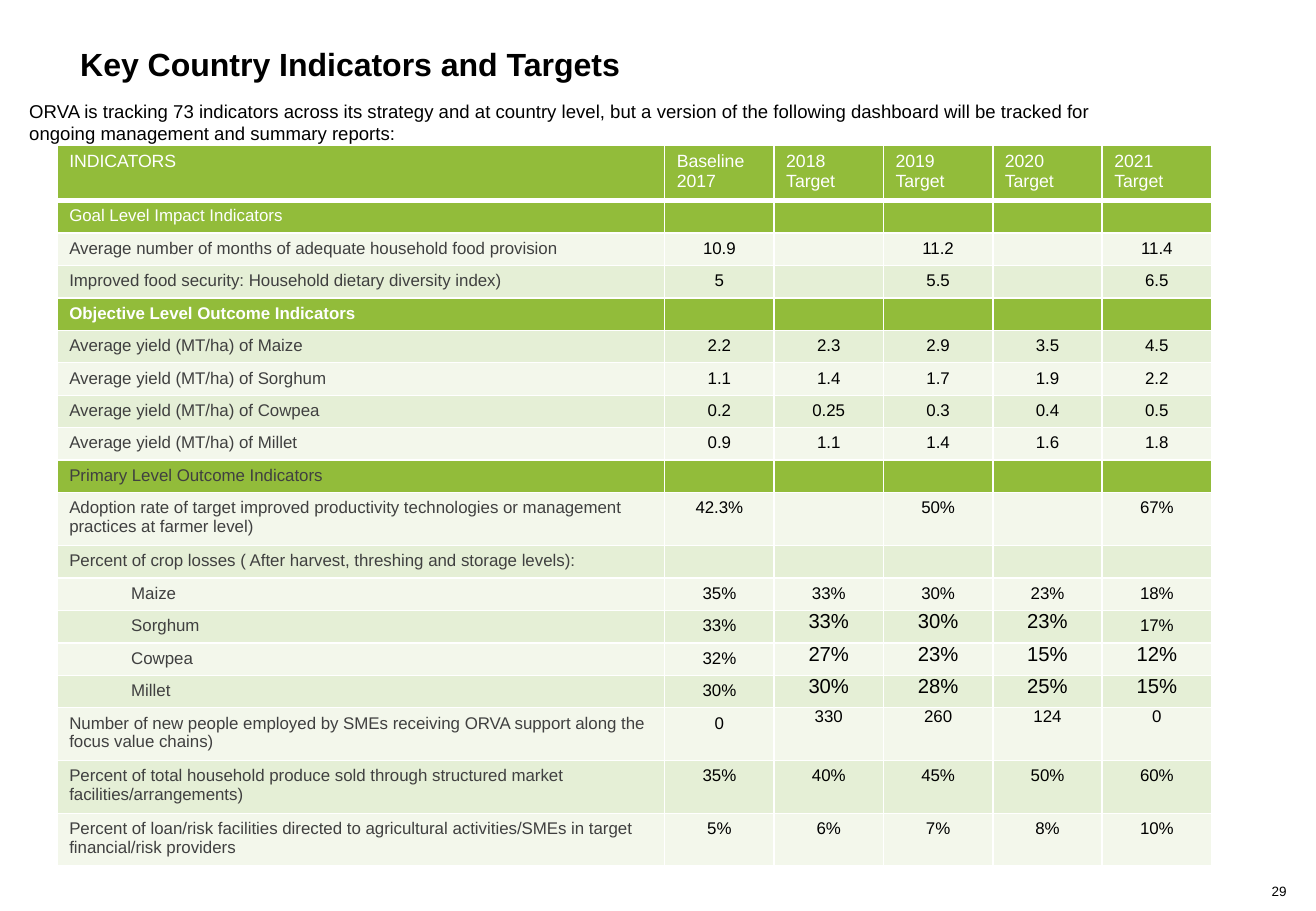
from dataclasses import dataclass

from lxml.etree import SubElement
from pptx import Presentation
from pptx.dml.color import RGBColor
from pptx.enum.text import MSO_ANCHOR as Anchor, PP_ALIGN as Align
from pptx.oxml.ns import qn
from pptx.util import Inches, Pt


@dataclass(frozen=True)
class Theme:
    font: str = "Arial"
    black: str = "000000"
    white: str = "FFFFFF"
    grey: str = "404040"
    green: str = "92BC3A"
    bands: tuple = ("F3F7EB", "E5EFD6")
    title: float = 19
    intro: float = 11
    header: float = 10.5
    body: float = 10
    large: float = 12
    page_number: float = 8


THEME = Theme()


@dataclass(frozen=True)
class Row:
    """An indicator; its last `flush` values have no cell margins."""
    label: str
    values: str = ""
    section: bool = False
    color: str = THEME.grey
    bold: bool = False
    indent: float = 0
    lines: int = 1
    flush: int = 0
    flush_size: float = THEME.large


HEADERS = (["INDICATORS"], ["Baseline", "2017"], ["2018 Target"],
           ["2019 Target"], ["2020 Target"], ["2021 Target"])

ROWS = (
    Row("Goal Level Impact Indicators", section=True, color=THEME.white),
    Row("Average number of months of adequate household food provision",
        "10.9 - 11.2 - 11.4"),
    Row("Improved food security: Household dietary diversity index)",
        "5 - 5.5 - 6.5"),
    Row("Objective Level Outcome Indicators", section=True,
        color=THEME.white, bold=True),
    Row("Average yield (MT/ha) of Maize", "2.2 2.3 2.9 3.5 4.5"),
    Row("Average yield (MT/ha) of Sorghum", "1.1 1.4 1.7 1.9 2.2"),
    Row("Average yield (MT/ha) of Cowpea", "0.2 0.25 0.3 0.4 0.5"),
    Row("Average yield (MT/ha) of Millet", "0.9 1.1 1.4 1.6 1.8"),
    Row("Primary Level Outcome Indicators", section=True),
    Row("Adoption rate of target improved productivity technologies or "
        "management practices at farmer level)", "42.3% - 50% - 67%", lines=2),
    Row("Percent of crop losses ( After harvest, threshing and storage levels):"),
    Row("Maize", "35% 33% 30% 23% 18%", indent=0.51),
    Row("Sorghum", "33% 33% 30% 23% 17%", indent=0.51, flush=4),
    Row("Cowpea", "32% 27% 23% 15% 12%", indent=0.51, flush=4),
    Row("Millet", "30% 30% 28% 25% 15%", indent=0.51, flush=4),
    Row("Number of new people employed by SMEs receiving ORVA support along "
        "the focus value chains)", "0 330 260 124 0", lines=2, flush=4,
        flush_size=THEME.body),
    Row("Percent of total household produce sold through structured market "
        "facilities/arrangements)", "35% 40% 45% 50% 60%", lines=2),
    Row("Percent of loan/risk facilities directed to agricultural "
        "activities/SMEs in target financial/risk providers",
        "5% 6% 7% 8% 10%", lines=2),
)
# The 2021 Sorghum value keeps the normal size and margins.
NORMAL_CELLS = {("Sorghum", 5)}


def add_span(para, text, size, color, bold=False):
    span = para.add_run()
    span.text = text
    span.font.name = THEME.font
    span.font.size = Pt(size)
    span.font.bold = bold
    span.font.color.rgb = RGBColor.from_string(color)


def add_text(page, text, place, size, bold=False, align=Align.LEFT,
             anchor=Anchor.BOTTOM, wrap=True):
    frame = page.shapes.add_textbox(*map(Inches, place)).text_frame
    frame.margin_left = frame.margin_right = 0
    frame.margin_top = frame.margin_bottom = 0
    frame.vertical_anchor = anchor
    frame.word_wrap = wrap
    para = frame.paragraphs[0]
    para.alignment = align
    add_span(para, text, size, THEME.black, bold)


def style_cell(cell, fill, bottom=1):
    """Fill the cell and draw white borders, the bottom one in its own width."""
    cell.fill.solid()
    cell.fill.fore_color.rgb = RGBColor.from_string(fill)
    properties = cell._tc.get_or_add_tcPr()
    widths = {"a:lnL": 1, "a:lnR": 1, "a:lnT": 1, "a:lnB": bottom}
    for position, (side, width) in enumerate(widths.items()):
        line = SubElement(properties, qn(side), w=str(Pt(width)))
        paint = SubElement(line, qn("a:solidFill"))
        SubElement(paint, qn("a:srgbClr"), val=THEME.white)
        properties.insert(position, line)


def fill_header(table):
    for column, lines in enumerate(HEADERS):
        cell = table.cell(0, column)
        style_cell(cell, THEME.green, bottom=3)
        for number, text in enumerate(lines):
            frame = cell.text_frame
            para = frame.add_paragraph() if number else frame.paragraphs[0]
            add_span(para, text, THEME.header, THEME.white)


def fill_value(cell, text, size, flush):
    para = cell.text_frame.paragraphs[0]
    para.alignment = Align.CENTER
    if flush:
        cell.margin_left = cell.margin_right = 0
        cell.margin_top = cell.margin_bottom = 0
    if text == "-":
        SubElement(para._p, qn("a:endParaRPr"), sz=str(int(size * 100)))
    else:
        add_span(para, text, size, THEME.black)


def fill_row(table, index, row):
    fill = THEME.green if row.section else THEME.bands[index % 2]
    label = table.cell(index, 0)
    style_cell(label, fill)
    para = label.text_frame.paragraphs[0]
    if row.indent:
        para.level = 1
        para._p.get_or_add_pPr().set("marL", str(Inches(row.indent)))
    add_span(para, row.label, THEME.body, row.color, row.bold)

    values = row.values.split() or ["-"] * 5
    for column, text in enumerate(values, 1):
        cell = table.cell(index, column)
        style_cell(cell, fill)
        flush = column > 5 - row.flush and (row.label, column) not in NORMAL_CELLS
        fill_value(cell, text, row.flush_size if flush else THEME.body, flush)


def add_indicators(page):
    frame = page.shapes.add_table(len(ROWS) + 1, len(HEADERS), Inches(0.47),
                                  Inches(1.2), Inches(9.5), Inches(5.6))
    table = frame.table
    table.first_row = table.horz_banding = False
    for number, column in enumerate(table.columns):
        column.width = Inches(0.9 if number else 5)
    table.rows[0].height = Inches(0.42)
    fill_header(table)
    for index, row in enumerate(ROWS, 1):
        table.rows[index].height = Inches(0.41 if row.lines == 2 else 0.25)
        fill_row(table, index, row)


def main():
    deck = Presentation()
    deck.slide_width, deck.slide_height = Inches(10.83), Inches(7.5)
    page = deck.slides.add_slide(deck.slide_layouts[6])
    add_text(page, "29", (10.45, 7.27, 0.14, 0.13), THEME.page_number,
             align=Align.RIGHT, anchor=Anchor.MIDDLE, wrap=False)
    add_text(page, "Key Country Indicators and Targets",
             (0.66, 0.36, 8.08, 0.32), THEME.title, bold=True)
    add_indicators(page)
    add_text(page, "ORVA is tracking 73 indicators across its strategy and at "
             "country level, but a version of the following dashboard will be "
             "tracked for ongoing management and summary reports:",
             (0.24, 0.86, 8.92, 0.33), THEME.intro)
    deck.save("out.pptx")


if __name__ == "__main__":
    main()
